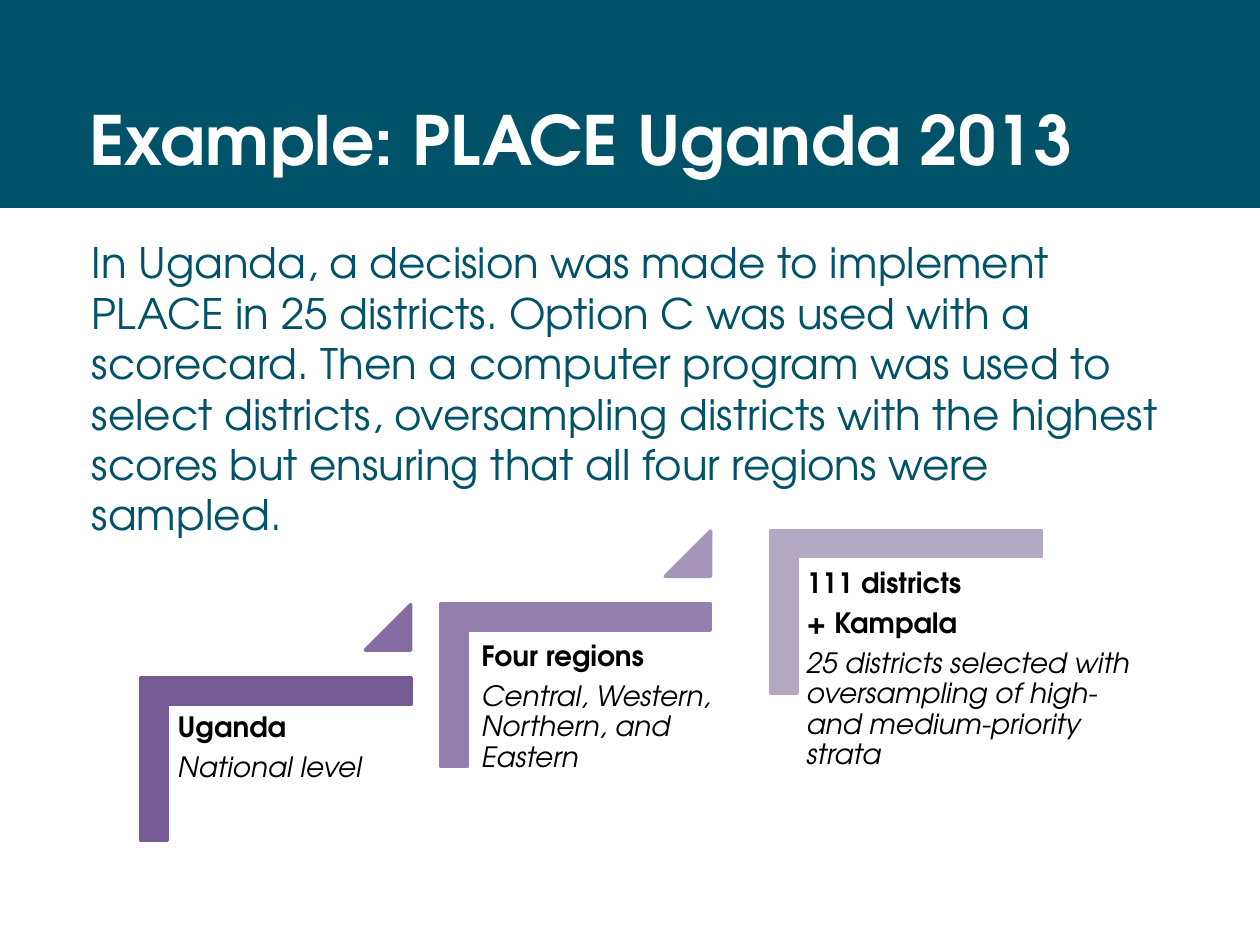
from lxml.etree import SubElement
from pptx import Presentation
from pptx.dml.color import RGBColor
from pptx.enum.shapes import MSO_SHAPE as Shape
from pptx.enum.text import MSO_ANCHOR as Anchor, MSO_AUTO_SIZE as AutoSize, PP_ALIGN as Align
from pptx.oxml.ns import qn
from pptx.util import Inches, Pt

FONT = "TeX Gyre Adventor"
COLORS = {"teal": "005268", "white": "FFFFFF", "black": "000000"}

INTRO = (
    "In Uganda, a decision was made to implement PLACE in 25 districts. "
    "Option C was used with a scorecard. Then a computer program was used to "
    "select districts, oversampling districts with the highest scores but "
    "ensuring that all four regions were sampled."
)

ARM_WIDTH, ARM_HEIGHT, ARM_RATIO = 2.14, 1.29, 0.161
TRIANGLE_SIZE, TRIANGLE_RISE = 0.36, 0.58
FIRST_TOP, STEP_RISE = 5.38, 0.585

# Left edge, corner colour, triangle colour, text box (left, top, width), headings, detail
STEPS = [
    (1.12, "745B93", "846CA2", (1.34, 5.59, 1.93), ["Uganda"], "National level"),
    (3.5, "9380AD", "A495B9", (3.75, 5.03, 2.32), ["Four regions"],
     "Central, Western, Northern, and Eastern"),
    (6.12, "B4A9C5", None, (6.33, 4.45, 2.87), ["111 districts", "+ Kampala"],
     "25 districts selected with oversampling of high- and medium-priority strata"),
]


def write(para, text, size, color="black", bold=False, italic=False,
          after=0, spacing=None):
    para.alignment = Align.LEFT
    para.space_before = Pt(0)
    para.space_after = Pt(after)
    if spacing:
        para.line_spacing = spacing
    span = para.add_run()
    span.text = text
    font = span.font
    font.name, font.size, font.bold, font.italic = FONT, Pt(size), bold, italic
    font.color.rgb = RGBColor.from_string(COLORS[color])


def remove_bullet(para):
    props = para._p.get_or_add_pPr()
    props.set("marL", "0")
    props.set("indent", "0")
    SubElement(props, qn("a:buNone"))


class SlideBuilder:
    def __init__(self, page):
        self.page = page

    def shape(self, kind, left, top, width, height, color, line=True):
        item = self.page.shapes.add_shape(
            kind, Inches(left), Inches(top), Inches(width), Inches(height))
        item.shadow.inherit = False
        item.fill.solid()
        item.fill.fore_color.rgb = RGBColor.from_string(color)
        if line:
            item.line.color.rgb = RGBColor.from_string(color)
            item.line.width = Pt(2)
        else:
            item.line.fill.background()
        return item

    def band(self, height):
        """Draw the header band behind the placeholders."""
        band = self.shape(Shape.RECTANGLE, 0, 0, 10, height, COLORS["teal"], line=False)
        self.page.shapes.title.element.addprevious(band.element)

    def placeholder(self, box, left, top, width, height, anchor):
        box.left, box.top = Inches(left), Inches(top)
        box.width, box.height = Inches(width), Inches(height)
        frame = box.text_frame
        frame.auto_size = AutoSize.NONE
        frame.vertical_anchor = anchor
        return frame.paragraphs[0]

    def title(self, text):
        para = self.placeholder(self.page.shapes.title, 0.61, 0.37, 8.7, 1.1, Anchor.BOTTOM)
        write(para, text, 38.8, "white", bold=True)

    def body(self, text):
        para = self.placeholder(self.page.placeholders[1], 0.63, 1.83, 8.67, 4.58, Anchor.TOP)
        write(para, text, 24, "teal", after=12)
        remove_bullet(para)

    def corner(self, left, top, color):
        """Draw a corner that is turned a quarter, given its visible top left."""
        shift = (ARM_WIDTH - ARM_HEIGHT) / 2
        corner = self.shape(Shape.CORNER, left + shift, top - shift,
                            ARM_HEIGHT, ARM_WIDTH, color)
        corner.rotation = 90
        corner.adjustments[0] = corner.adjustments[1] = ARM_RATIO

    def triangle(self, left, top, color):
        triangle = self.shape(Shape.ISOSCELES_TRIANGLE, left, top,
                              TRIANGLE_SIZE, TRIANGLE_SIZE, color)
        triangle.adjustments[0] = 1

    def step_text(self, left, top, width, headings, detail):
        box = self.page.shapes.add_textbox(
            Inches(left), Inches(top), Inches(width), Inches(1.7))
        frame = box.text_frame
        frame.word_wrap = True
        frame.margin_left = frame.margin_right = Inches(0.07)
        frame.margin_top = frame.margin_bottom = Inches(0.07)
        para = frame.paragraphs[0]
        for heading in headings:
            write(para, heading, 16, bold=True, after=5.6, spacing=0.9)
            para = frame.add_paragraph()
        write(para, detail, 16, italic=True, after=2.4, spacing=0.9)


def main():
    deck = Presentation()
    deck.slide_width, deck.slide_height = Inches(10), Inches(7.5)
    builder = SlideBuilder(deck.slides.add_slide(deck.slide_layouts[1]))

    builder.band(1.65)
    builder.title("Example: PLACE Uganda 2013")
    builder.body(INTRO)

    for index, (left, color, next_color, place, headings, detail) in enumerate(STEPS):
        top = FIRST_TOP - index * STEP_RISE
        builder.corner(left, top, color)
        builder.step_text(*place, headings, detail)
        if next_color:
            builder.triangle(left + ARM_WIDTH - TRIANGLE_SIZE, top - TRIANGLE_RISE, next_color)

    deck.save("out.pptx")


if __name__ == "__main__":
    main()
